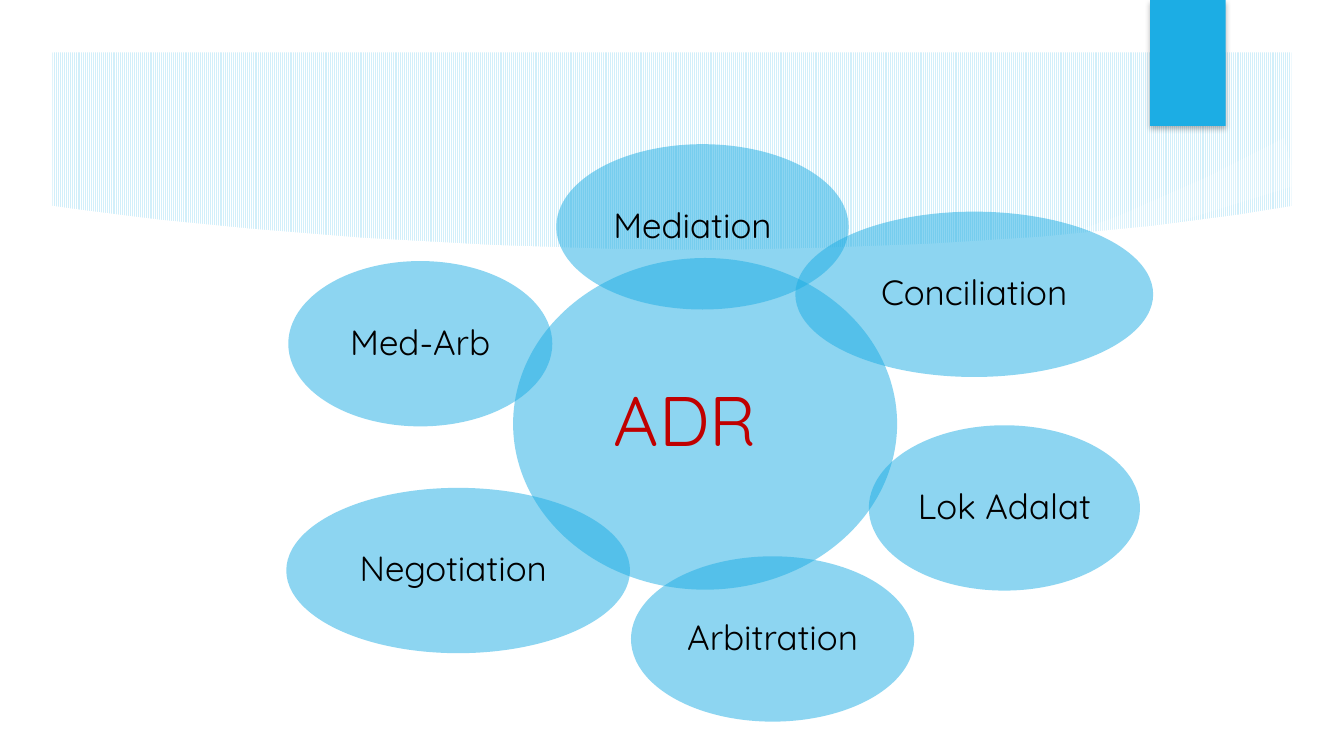
from dataclasses import dataclass

from pptx import Presentation
from pptx.dml.color import RGBColor
from pptx.enum.dml import MSO_PATTERN
from pptx.enum.shapes import MSO_SHAPE
from pptx.enum.text import MSO_ANCHOR, PP_ALIGN
from pptx.oxml import parse_xml
from pptx.oxml.ns import nsdecls, qn
from pptx.oxml.xmlchemy import OxmlElement
from pptx.shapes.autoshape import Shape
from pptx.slide import Slide
from pptx.util import Pt

ELLIPSE = MSO_SHAPE.OVAL
RECTANGLE = MSO_SHAPE.RECTANGLE
LIGHT_VERTICAL = MSO_PATTERN.LIGHT_VERTICAL
CENTER = PP_ALIGN.CENTER
MIDDLE = MSO_ANCHOR.MIDDLE

WIDTH, HEIGHT = 960, 540
FONT = "Quicksand"
BLUE, WHITE, BLACK, RED = "1CADE4", "FFFFFF", "000000", "C00000"

Points = list[tuple[float, float]]


@dataclass
class Bubble:
    label: str
    left: float
    top: float
    width: float
    height: float = 118.1
    size: float = 25
    color: str = BLACK
    inset: float = 2.2
    extra_right: float = 0


BUBBLES = [
    Bubble("ADR", 366.5, 184.3, 274.3, 236.9, 50, RED, 5, 28.6),
    Bubble("Mediation", 397.4, 103, 208.8, extra_right=14.3),
    Bubble("Conciliation", 568.1, 151.2, 255.6),
    Bubble("Lok Adalat", 620.6, 303.8, 193.7),
    Bubble("Arbitration", 450.7, 397.4, 202.3),
    Bubble("Negotiation", 204.5, 348.5, 245.5, extra_right=7.1),
    Bubble("Med-Arb", 205.9, 186.5, 188.6),
]

SWOOSH: Points = [
    (672.5, 180), (793.4, 171.4), (928.1, 154.1), (923.8, 119.5),
    (865.4, 137.5), (798.5, 154.1), (734.4, 165.6), (669.6, 175),
]
PAPER: Points = [
    (36, 146.9), (36, 504), (924.5, 504), (924.5, 146.9), (884.2, 153.4),
    (823.7, 161.3), (743, 169.2), (663.1, 174.2), (585.4, 177.1),
    (509.8, 178.6), (437, 177.8), (351.4, 175), (259.2, 169.9),
    (179.3, 163.4), (114.5, 157), (67.7, 151.2),
]
FRAME_OUTER: Points = [(0, 0), (0, HEIGHT), (WIDTH, HEIGHT), (WIDTH, 0)]
FRAME_INNER: Points = [(922.5, 502.5), (37.5, 502.5), (37.5, 37.5), (922.5, 37.5)]


def rgb(color: str) -> RGBColor:
    return RGBColor.from_string(color)


def paint(shape: Shape, color: str, opacity: int = 100) -> None:
    shape.shadow.inherit = False
    shape.line.fill.background()
    shape.fill.solid()
    shape.fill.fore_color.rgb = rgb(color)
    if opacity < 100:
        alpha = OxmlElement("a:alpha")
        alpha.set("val", str(opacity * 1000))
        shape._element.spPr.find(f".//{qn('a:srgbClr')}").append(alpha)


def add_outline(page: Slide, contours: list[Points], opacity: int = 100) -> Shape:
    contours = [[(Pt(x), Pt(y)) for x, y in contour] for contour in contours]
    first, *others = contours
    builder = page.shapes.build_freeform(*first[0])
    builder.add_line_segments(first[1:])
    for contour in others:
        builder.move_to(*contour[0])
        builder.add_line_segments(contour[1:])
    shape = builder.convert_to_shape()
    paint(shape, WHITE, opacity)
    return shape


def add_ribbon(page: Slide) -> None:
    ribbon = page.shapes.add_shape(RECTANGLE, Pt(821.5), Pt(0), Pt(54), Pt(90))
    paint(ribbon, BLUE)
    effects = ribbon._element.spPr.find(qn("a:effectLst"))
    effects.append(parse_xml(
        f'<a:outerShdw {nsdecls("a")} blurRad="{Pt(4)}" dist="{Pt(2)}" '
        f'dir="5400000" rotWithShape="0"><a:srgbClr val="{BLACK}">'
        '<a:alpha val="28000"/></a:srgbClr></a:outerShdw>'
    ))


def add_bubble(page: Slide, bubble: Bubble) -> None:
    shape = page.shapes.add_shape(
        ELLIPSE, Pt(bubble.left), Pt(bubble.top), Pt(bubble.width), Pt(bubble.height)
    )
    paint(shape, BLUE, 50)
    frame = shape.text_frame
    frame.word_wrap = True
    frame.vertical_anchor = MIDDLE
    frame.margin_left = frame.margin_top = frame.margin_bottom = Pt(bubble.inset)
    frame.margin_right = Pt(bubble.inset + bubble.extra_right)
    para = frame.paragraphs[0]
    para.text = bubble.label
    para.alignment = CENTER
    para.line_spacing = 0.9
    para.font.name = FONT
    para.font.size = Pt(bubble.size)
    para.font.color.rgb = rgb(bubble.color)


def main() -> None:
    deck = Presentation()
    deck.slide_width, deck.slide_height = Pt(WIDTH), Pt(HEIGHT)
    page = deck.slides.add_slide(deck.slide_layouts[6])

    backdrop = page.background.fill
    backdrop.patterned()
    backdrop.pattern = LIGHT_VERTICAL
    backdrop.fore_color.rgb = rgb("D2EFFA")
    backdrop.back_color.rgb = rgb(WHITE)

    add_outline(page, [SWOOSH], 20).rotation = 350.2
    add_outline(page, [PAPER])
    add_outline(page, [FRAME_OUTER, FRAME_INNER])
    add_ribbon(page)
    for bubble in BUBBLES:
        add_bubble(page, bubble)
    deck.save("out.pptx")


if __name__ == "__main__":
    main()
